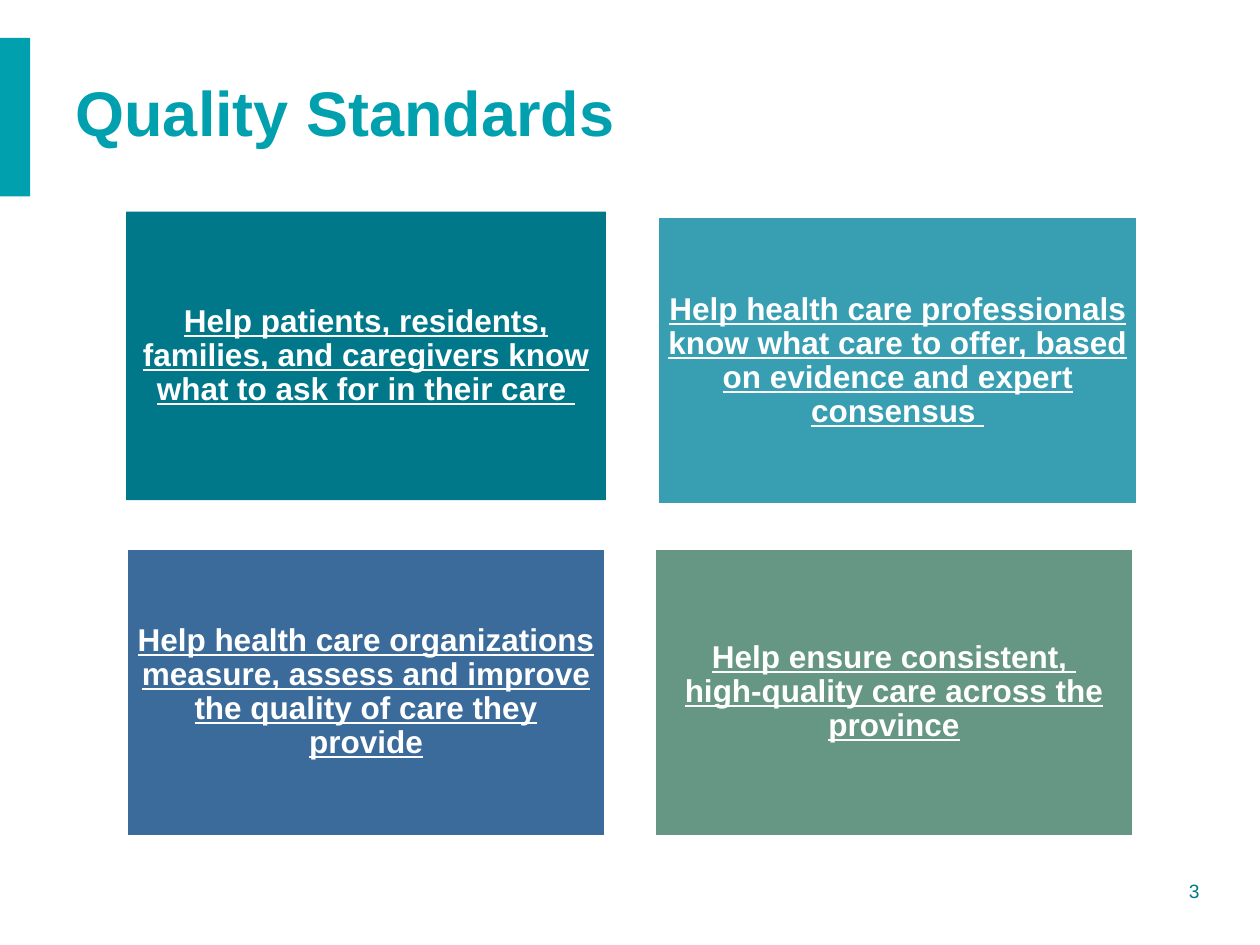
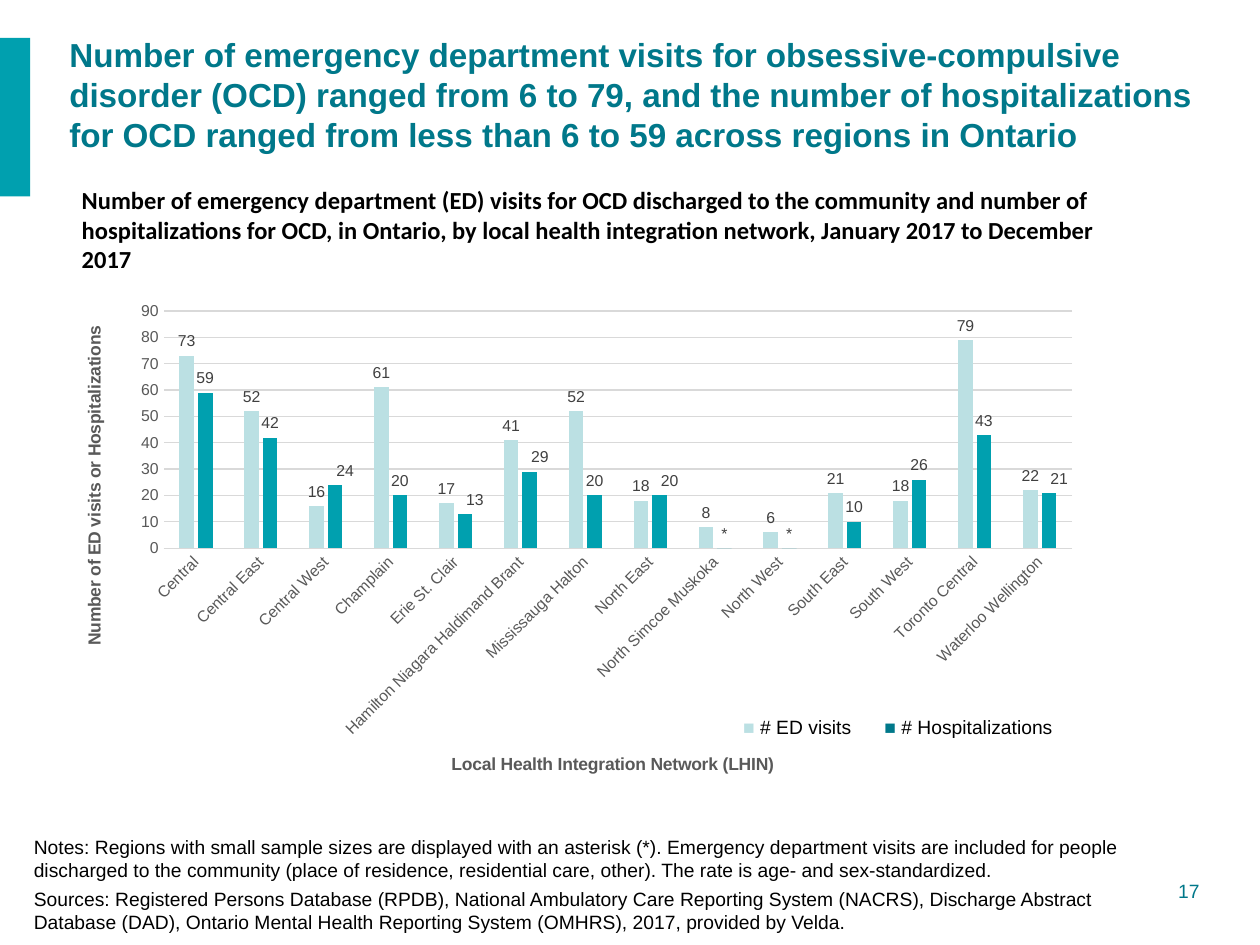
import lxml.etree
import pptx
import pptx.chart.data
import pptx.dml.color
import pptx.enum.chart
import pptx.enum.shapes
import pptx.enum.text
import pptx.oxml
import pptx.oxml.ns
import pptx.util

Inches = pptx.util.Inches
Pt = pptx.util.Pt
ALIGN = pptx.enum.text.PP_ALIGN
ANCHOR = pptx.enum.text.MSO_ANCHOR
qn = pptx.oxml.ns.qn

COLORS = {
    "band": "00A0AF", "teal": "00788A", "aqua": "389EB2", "blue": "3B6B9B",
    "green": "669684", "pale": "BBE0E3", "white": "FFFFFF", "black": "000000",
    "axis": "595959", "label": "404040", "grid": "D9D9D9",
}
TITLE_ONLY = 5

CARDS = [
    (1, 1.68, "teal", 0, ["Help patients, residents, families, and caregivers know what to ask for in their care "]),
    (5.22, 1.72, "aqua", 2, ["Help health care professionals know what care to offer, based on evidence and expert consensus "]),
    (1, 4.35, "blue", 2, ["Help health care organizations measure, assess and improve the quality of care they provide"]),
    (5.19, 4.35, "green", 2, ["Help ensure consistent, ", "high-quality care across the province"]),
]
CARD_SIZE = (3.81, 2.29)

VISITS_BY_REGION = [
    ("Central", 73, 59), ("Central East", 52, 42), ("Central West", 16, 24),
    ("Champlain", 61, 20), ("Erie St. Clair", 17, 13),
    ("Hamilton Niagara Haldimand Brant", 41, 29), ("Mississauga Halton", 52, 20),
    ("North East", 18, 20), ("North Simcoe Muskoka", 8, 0), ("North West", 6, 0),
    ("South East", 21, 10), ("South West", 18, 26), ("Toronto Central", 79, 43),
    ("Waterloo Wellington", 22, 21),
]
SUPPRESSED = (8, 9)
NUDGED_LABELS = (2, 4, 5, 7, 13)
LABEL_SHIFT = 0.01
NOTES = [
    "Notes: Regions with small sample sizes are displayed with an asterisk (*). Emergency department visits are included for people discharged to the community (place of residence, residential care, other). The rate is age- and sex-standardized.",
    "Sources: Registered Persons Database (RPDB), National Ambulatory Care Reporting System (NACRS), Discharge Abstract Database (DAD), Ontario Mental Health Reporting System (OMHRS), 2017, provided by Velda.",
]


def rgb(name):
    """Return the named colour."""
    return pptx.dml.color.RGBColor.from_string(COLORS[name])


def style_font(font, size, color, bold=False, face="Arial"):
    """Format a font."""
    font.name, font.size, font.bold = face, Pt(size), bold
    font.color.rgb = rgb(color)


def add_run(paragraph, text, size, color, bold=False, face="Arial"):
    """Append one formatted run."""
    run = paragraph.add_run()
    run.text = text
    style_font(run.font, size, color, bold, face)
    return run


def add_text(slide, box, texts, size, color, bold=False, face="Arial", align=ALIGN.LEFT, before=0):
    """Add a wrapped text box with one paragraph per text."""
    frame = slide.shapes.add_textbox(*map(Inches, box)).text_frame
    frame.word_wrap = True
    for index, text in enumerate(texts):
        paragraph = frame.add_paragraph() if index else frame.paragraphs[0]
        paragraph.alignment, paragraph.space_before = align, Pt(before)
        add_run(paragraph, text, size, color, bold, face)


def add_block(slide, box, color):
    """Add a plain filled rectangle."""
    block = slide.shapes.add_shape(pptx.enum.shapes.MSO_SHAPE.RECTANGLE, *map(Inches, box))
    block.shadow.inherit = False
    block.fill.solid()
    block.fill.fore_color.rgb = rgb(color)
    block.line.fill.background()
    return block


def add_base_slide(deck, title_box, title, size, color, anchor, page):
    """Add a slide with the shared band, title and page number."""
    slide = deck.slides.add_slide(deck.slide_layouts[TITLE_ONLY])
    add_block(slide, (0, 0.3, 0.24, 1.26), "band")
    add_text(slide, (8.45, 6.93, 1.17, 0.29), [page], 11, "teal", align=ALIGN.RIGHT, before=5.5)
    heading = slide.shapes.title
    heading.left, heading.top, heading.width, heading.height = map(Inches, title_box)
    frame = heading.text_frame
    frame.auto_size = pptx.enum.text.MSO_AUTO_SIZE.NONE
    frame.word_wrap, frame.vertical_anchor = True, anchor
    frame.paragraphs[0].alignment = ALIGN.LEFT
    add_run(frame.paragraphs[0], title, size, color, True)
    return slide


def add_card(slide, box, color, border, lines):
    """Add a coloured card with a centred underlined statement."""
    card = add_block(slide, box, color)
    if border:
        card.line.color.rgb, card.line.width = rgb("white"), Pt(border)
    frame = card.text_frame
    frame.word_wrap, frame.vertical_anchor = True, ANCHOR.MIDDLE
    frame.margin_left = frame.margin_right = Inches(0.07)
    frame.margin_top = frame.margin_bottom = Inches(0.07)
    paragraph = frame.paragraphs[0]
    paragraph.alignment, paragraph.line_spacing = ALIGN.CENTER, 0.9
    paragraph.space_after = Pt(6.3)
    for index, line in enumerate(lines):
        if index:
            paragraph.add_line_break()
        add_run(paragraph, line, 18, "white", True).font.underline = True


def build_standards_slide(deck):
    """Build the slide with the four aims of quality standards."""
    slide = add_base_slide(deck, (0.5, 0.5, 7.81, 0.77), "Quality Standards", 36, "band", ANCHOR.MIDDLE, "3")
    for left, top, color, border, lines in CARDS:
        add_card(slide, (left, top, *CARD_SIZE), color, border, lines)


def manual_layout(inner=False, **places):
    """Return a chart layout element with fractional places."""
    layout = lxml.etree.Element(qn("c:layout"))
    manual = lxml.etree.SubElement(layout, qn("c:manualLayout"))
    if inner:
        lxml.etree.SubElement(manual, qn("c:layoutTarget")).set("val", "inner")
    if "edge" in places:
        for mode in ("xMode", "yMode"):
            lxml.etree.SubElement(manual, qn(f"c:{mode}")).set("val", places["edge"])
    for key in ("x", "y", "w", "h"):
        if key in places:
            lxml.etree.SubElement(manual, qn(f"c:{key}")).set("val", str(places[key]))
    return layout


def style_axis(axis, title, x, y):
    """Format an axis and place its title."""
    axis.major_tick_mark = axis.minor_tick_mark = pptx.enum.chart.XL_TICK_MARK.NONE
    style_font(axis.tick_labels.font, 9, "axis")
    paragraph = axis.axis_title.text_frame.paragraphs[0]
    add_run(paragraph, title, 10, "axis", True)
    element = axis.axis_title._element
    for old in element.findall(qn("c:layout")):
        element.remove(old)
    element.find(qn("c:tx")).addnext(manual_layout(edge="edge", x=x, y=y))


def style_series(series, color):
    """Colour a series and show its values."""
    series.format.fill.solid()
    series.format.fill.fore_color.rgb = rgb(color)
    series.invert_if_negative = False
    labels = series.data_labels
    labels.show_value = True
    labels.position = pptx.enum.chart.XL_LABEL_POSITION.OUTSIDE_END
    style_font(labels.font, 9, "label")


def adjust_labels(series):
    """Mark suppressed values and shift crowded labels."""
    for index in SUPPRESSED:
        label = series.points[index].data_label
        add_run(label.text_frame.paragraphs[0], "*", 9, "label")
        label.position = pptx.enum.chart.XL_LABEL_POSITION.OUTSIDE_END
    for index in NUDGED_LABELS:
        label = series.points[index].data_label
        style_font(label.font, 9, "label")
        label.position = pptx.enum.chart.XL_LABEL_POSITION.OUTSIDE_END
        holder = series.data_labels._element.xpath(f"c:dLbl[c:idx/@val='{index}']")[0]
        holder.find(qn("c:idx")).addnext(manual_layout(x=LABEL_SHIFT, y=0))


def add_region_chart(slide, box):
    """Add the column chart of visits and hospitalizations by region."""
    regions, visits, stays = zip(*VISITS_BY_REGION)
    data = pptx.chart.data.CategoryChartData()
    data.categories = regions
    data.add_series("# ED visits", visits)
    data.add_series("# Hospitalizations", stays)
    kind = pptx.enum.chart.XL_CHART_TYPE.COLUMN_CLUSTERED
    chart = slide.shapes.add_chart(kind, *map(Inches, box), data).chart
    chart.has_legend = chart.has_title = False
    style_font(chart.font, 10, "black")
    plot = chart.plots[0]
    plot.gap_width, plot.overlap, plot.vary_by_categories = 219, -27, False
    for series, color in zip(plot.series, ("pale", "band")):
        style_series(series, color)
    adjust_labels(plot.series[1])

    region_axis, count_axis = chart.category_axis, chart.value_axis
    style_axis(region_axis, "Local Health Integration Network (LHIN)", 0.37, 0.9)
    style_axis(count_axis, "Number of ED visits or Hospitalizations", 0.01, 0.06)
    region_axis._element.find(qn("c:txPr")).find(qn("a:bodyPr")).set("rot", "-2700000")
    count_axis.minimum_scale, count_axis.maximum_scale, count_axis.major_unit = 0, 90, 10
    count_axis.format.line.fill.background()
    for line in (region_axis.format.line, count_axis.major_gridlines.format.line):
        line.color.rgb, line.width = rgb("grid"), Pt(0.75)

    area = chart._chartSpace.chart.plotArea
    for old in area.findall(qn("c:layout")):
        area.remove(old)
    area.insert(0, manual_layout(True, edge="edge", x=0.092, y=0.037, w=0.887, h=0.467))


def add_legend(slide, box):
    """Add the chart key with a tab between its entries."""
    frame = slide.shapes.add_textbox(*map(Inches, box)).text_frame
    frame.word_wrap = True
    key = frame.paragraphs[0]
    for color, entry in (("pale", "# ED visits\t"), ("teal", "# Hospitalizations")):
        add_run(key, "■ ", 11, color)
        add_run(key, entry, 11, "black")
    stops = lxml.etree.SubElement(key._p.get_or_add_pPr(), qn("a:tabLst"))
    stop = lxml.etree.SubElement(stops, qn("a:tab"))
    stop.set("pos", str(Inches(1.12)))
    stop.set("algn", "l")


def build_regions_slide(deck):
    """Build the slide comparing regions."""
    title = "Number of emergency department visits for obsessive-compulsive disorder (OCD) ranged from 6 to 79, and the number of hospitalizations for OCD ranged from less than 6 to 59 across regions in Ontario"
    subtitle = "Number of emergency department (ED) visits for OCD discharged to the community and number of hospitalizations for OCD, in Ontario, by local health integration network, January 2017 to December 2017"
    slide = add_base_slide(deck, (0.45, 0.22, 9.37, 1.06), title, 19, "teal", ANCHOR.TOP, "17")
    add_text(slide, (0.17, 6.58, 8.9, 0.9), NOTES, 11, "black", before=3.3)
    add_text(slide, (0.55, 1.42, 8.59, 0.81), [subtitle], 14, "black", True, "Calibri")
    add_region_chart(slide, (0.55, 2.32, 8.13, 4.03))
    add_legend(slide, (5.8, 5.63, 3.67, 0.28))


def main():
    """Build and save the deck."""
    deck = pptx.Presentation()
    deck.slide_width, deck.slide_height = Inches(10), Inches(7.5)
    build_standards_slide(deck)
    build_regions_slide(deck)
    deck.save("out.pptx")


if __name__ == "__main__":
    main()
